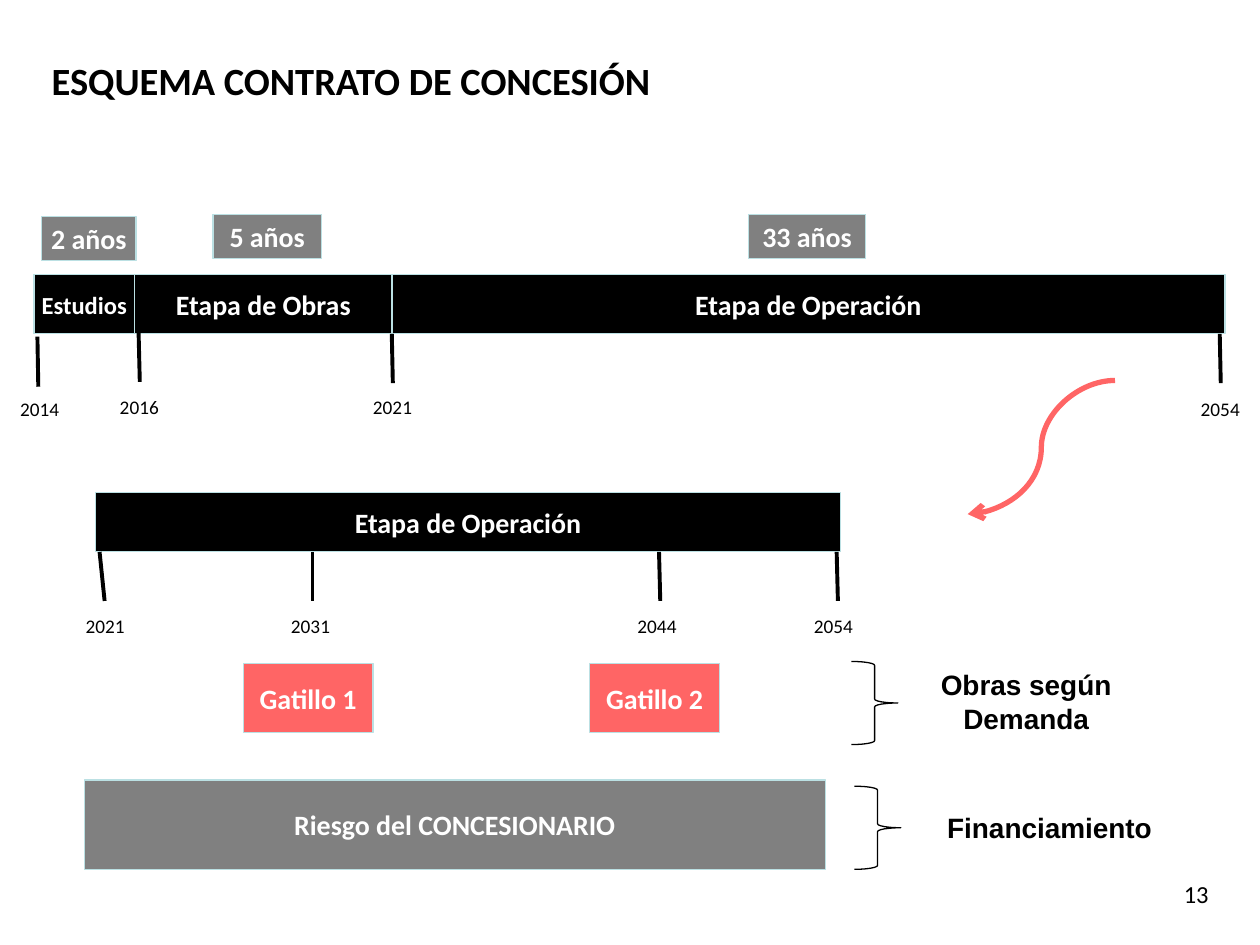
from dataclasses import dataclass

from lxml import etree
from pptx import Presentation
from pptx.dml.color import RGBColor
from pptx.enum.shapes import MSO_CONNECTOR, MSO_SHAPE
from pptx.enum.text import MSO_ANCHOR, MSO_AUTO_SIZE, PP_ALIGN
from pptx.oxml.ns import qn
from pptx.util import Pt

STRAIGHT, CURVE = MSO_CONNECTOR.STRAIGHT, MSO_CONNECTOR.CURVE
RECTANGLE, RIGHT_BRACE = MSO_SHAPE.RECTANGLE, MSO_SHAPE.RIGHT_BRACE
TOP, MIDDLE = MSO_ANCHOR.TOP, MSO_ANCHOR.MIDDLE
LEFT, CENTER, RIGHT = PP_ALIGN.LEFT, PP_ALIGN.CENTER, PP_ALIGN.RIGHT
NO_AUTOSIZE = MSO_AUTO_SIZE.NONE
TITLE_ONLY = 5


@dataclass(frozen=True)
class Theme:
    black: RGBColor = RGBColor(0, 0, 0)
    white: RGBColor = RGBColor(255, 255, 255)
    gray: RGBColor = RGBColor(0x80, 0x80, 0x80)
    coral: RGBColor = RGBColor(0xFF, 0x65, 0x65)
    border: RGBColor = RGBColor(0xBB, 0xE0, 0xE3)
    font: str = "Calibri"
    note_font: str = "Arial"
    title_size: float = 22
    body_size: float = 16
    small_size: float = 14
    year_size: float = 11
    thin: float = 0.75
    tick: float = 2.25
    curve: float = 3


THEME = Theme()


@dataclass(frozen=True)
class Frame:
    left: float
    top: float
    width: float
    height: float

    def lengths(self) -> tuple:
        return Pt(self.left), Pt(self.top), Pt(self.width), Pt(self.height)


@dataclass(frozen=True)
class TextStyle:
    size: float
    color: RGBColor = THEME.black
    bold: bool = False
    font: str = THEME.font
    align: PP_ALIGN = CENTER
    anchor: MSO_ANCHOR = MIDDLE
    side_inset: float = 2.88


@dataclass(frozen=True)
class Box:
    text: str
    frame: Frame
    fill: RGBColor
    size: float = THEME.body_size


@dataclass(frozen=True)
class Milestone:
    year: str
    label: Frame
    start: tuple[float, float]
    end: tuple[float, float]


@dataclass(frozen=True)
class Note:
    text: str
    frame: Frame
    brace: Frame


TITLE_STYLE = TextStyle(THEME.title_size, bold=True, align=LEFT, side_inset=7.2)
YEAR_STYLE = TextStyle(THEME.year_size)
NOTE_STYLE = TextStyle(THEME.body_size, bold=True, font=THEME.note_font,
                       anchor=TOP, side_inset=7.2)
NUMBER_STYLE = TextStyle(THEME.small_size, align=RIGHT, anchor=TOP, side_inset=7.2)

CONTRACT_BOXES = [
    Box("Etapa de Obras", Frame(77, 157, 147, 33.8), THEME.black),
    Box("Etapa de Operación", Frame(224, 157, 476, 33.8), THEME.black),
    Box("Estudios", Frame(19.4, 157, 57.6, 33.8), THEME.black, THEME.small_size),
    Box("2 años", Frame(23.8, 123.8, 54, 25.2), THEME.gray),
    Box("5 años", Frame(121.7, 122.4, 62, 25.2), THEME.gray),
    Box("33 años", Frame(427.7, 122.4, 67, 25.2), THEME.gray),
]
CONTRACT_MILESTONES = [
    Milestone("2014", Frame(2.9, 224.8, 39.6, 17.3), (21.4, 192.4), (21.9, 221)),
    Milestone("2016", Frame(59.8, 224, 39.6, 17.3), (79.2, 190.4), (79.9, 218.2)),
    Milestone("2021", Frame(204.5, 224, 39.6, 17.3), (223.9, 190.8), (224.5, 218.9)),
    Milestone("2054", Frame(677.5, 224.8, 39.6, 17.3), (697, 190.8), (697.6, 218.9)),
]
OPERATION_BOXES = [
    Box("Etapa de Operación", Frame(54.7, 281.5, 425.5, 33.8), THEME.black),
]
OPERATION_MILESTONES = [
    Milestone(year, Frame(left, 349.2, 71.3, 17.3), (start, 315.4), (end, 343.4))
    for year, left, start, end in [
        ("2021", 24.5, 56.9, 59.8),
        ("2031", 141.8, 178.6, 178.6),
        ("2044", 339.8, 376.6, 377.3),
        ("2054", 440.6, 478.1, 478.8),
    ]
]
RISK_BOXES = [
    Box("Riesgo del CONCESIONARIO", Frame(48.2, 445.7, 423.4, 51.1), THEME.gray),
    Box("Gatillo 1", Frame(139, 379, 74.2, 39.6), THEME.coral),
    Box("Gatillo 2", Frame(337, 379, 74.2, 39.6), THEME.coral),
]
NOTES = [
    Note("Financiamiento", Frame(520.6, 459.4, 158.4, 26.6),
         Frame(488.2, 449.3, 26.6, 47.5)),
    Note("Obras según Demanda", Frame(518.4, 378, 136, 46),
         Frame(486.5, 378, 26.6, 47.5)),
]


def write_text(shape, text: str, style: TextStyle) -> None:
    text_frame = shape.text_frame
    text_frame.word_wrap = True
    text_frame.auto_size = NO_AUTOSIZE
    text_frame.vertical_anchor = style.anchor
    text_frame.margin_left = text_frame.margin_right = Pt(style.side_inset)
    text_frame.margin_top = text_frame.margin_bottom = Pt(3.6)
    paragraph = text_frame.paragraphs[0]
    paragraph.alignment = style.align
    run = paragraph.add_run()
    run.text = text
    run.font.name = style.font
    run.font.size = Pt(style.size)
    run.font.bold = style.bold
    run.font.color.rgb = style.color


def draw_text(shapes, text: str, frame: Frame, style: TextStyle) -> None:
    write_text(shapes.add_textbox(*frame.lengths()), text, style)


def draw_box(shapes, box: Box) -> None:
    shape = shapes.add_shape(RECTANGLE, *box.frame.lengths())
    shape.shadow.inherit = False
    shape.fill.solid()
    shape.fill.fore_color.rgb = box.fill
    shape.line.color.rgb = THEME.border
    shape.line.width = Pt(THEME.thin)
    write_text(shape, box.text, TextStyle(box.size, THEME.white, True))


def draw_connector(shapes, kind: MSO_CONNECTOR, start: tuple[float, float],
                   end: tuple[float, float], color: RGBColor, width: float,
                   arrow: bool = False) -> None:
    connector = shapes.add_connector(kind, *(Pt(value) for value in start + end))
    connector.line.color.rgb = color
    connector.line.width = Pt(width)
    properties = connector._element.spPr
    if arrow:
        etree.SubElement(properties.find(qn("a:ln")), qn("a:tailEnd"), type="arrow")
    etree.SubElement(properties, qn("a:effectLst"))


def draw_timeline(shapes, boxes: list[Box], milestones: list[Milestone]) -> None:
    for box in boxes:
        draw_box(shapes, box)
    for milestone in milestones:
        draw_connector(shapes, STRAIGHT, milestone.start, milestone.end,
                       THEME.black, THEME.tick)
        draw_text(shapes, milestone.year, milestone.label, YEAR_STYLE)


def draw_note(shapes, note: Note) -> None:
    brace = shapes.add_shape(RIGHT_BRACE, *note.brace.lengths())
    brace.shadow.inherit = False
    brace.fill.background()
    brace.line.color.rgb = THEME.black
    brace.line.width = Pt(THEME.thin)
    draw_text(shapes, note.text, note.frame, NOTE_STYLE)


def main() -> None:
    presentation = Presentation()
    presentation.slide_width, presentation.slide_height = Pt(720), Pt(540)
    slide = presentation.slides.add_slide(presentation.slide_layouts[TITLE_ONLY])
    shapes = slide.shapes
    title = shapes.title
    title.left, title.top, title.width, title.height = Frame(22.3, 26, 427.7, 39.6).lengths()
    write_text(title, "ESQUEMA CONTRATO DE CONCESIÓN", TITLE_STYLE)
    draw_text(shapes, "13", Frame(530, 499, 167.8, 37.4), NUMBER_STYLE)
    draw_timeline(shapes, CONTRACT_BOXES, CONTRACT_MILESTONES)
    draw_connector(shapes, CURVE, (637.2, 217.4), (553, 293.8),
                   THEME.coral, THEME.curve, arrow=True)
    operation = shapes.add_group_shape()
    draw_timeline(operation.shapes, OPERATION_BOXES, OPERATION_MILESTONES)
    for box in RISK_BOXES:
        draw_box(shapes, box)
    for note in NOTES:
        draw_note(shapes, note)
    presentation.save("out.pptx")


if __name__ == "__main__":
    main()
